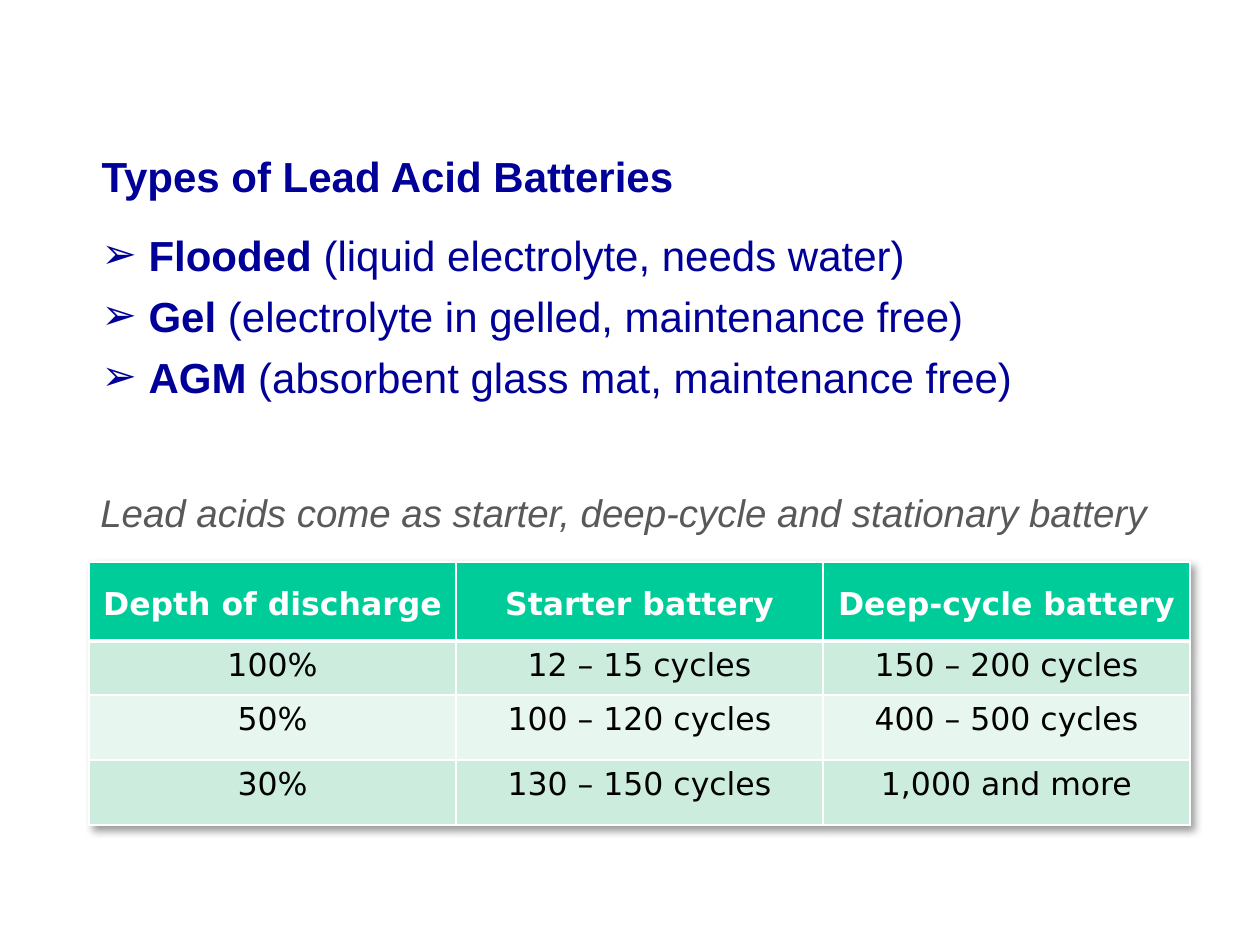
from lxml import etree
from pptx import Presentation, util as u
from pptx.dml.color import RGBColor
from pptx.enum import text
from pptx.oxml import parse_xml
from pptx.oxml.ns import nsdecls, qn

PX = 914400 // 126


def rgb(value):
    return RGBColor.from_string(value)


def style(run, font, size, color, bold=False, italic=False):
    f = run.font
    f.name, f.size, f.bold, f.italic = font, u.Pt(size), bold, italic
    f.color.rgb = rgb(color)


prs = Presentation()
prs.slide_width, prs.slide_height = u.Inches(10), u.Inches(7.5)
s = prs.slides.add_slide(prs.slide_layouts[1])
title, body = s.shapes.title, s.placeholders[1]
note = s.shapes.add_textbox(0, 0, 0, 0)

boxes = [(title, 89, 144, 953, 61), (body, 89, 223, 953, 190), (note, 88, 483, 1091, 59)]
for sp, x, y, w, h in boxes:
    sp.left, sp.top, sp.width, sp.height = x * PX, y * PX, w * PX, h * PX
    tf = sp.text_frame
    tf.word_wrap = True
    tf.auto_size = text.MSO_AUTO_SIZE.NONE
    tf.vertical_anchor = text.MSO_ANCHOR.TOP

title.text_frame.text = "Types of Lead Acid Batteries"
p = title.text_frame.paragraphs[0]
p.alignment = text.PP_ALIGN.LEFT
style(p.runs[0], "Arial", 24, "000099", bold=True)

types = [
    ("Flooded", " (liquid electrolyte, needs water)"),
    ("Gel", " (electrolyte in gelled, maintenance free)"),
    ("AGM", " (absorbent glass mat, maintenance free)"),
]
tf = body.text_frame
for i, (name, detail) in enumerate(types):
    p = tf.paragraphs[0] if i == 0 else tf.add_paragraph()
    pPr = p._p.get_or_add_pPr()
    pPr.set("marL", str(47 * PX))
    pPr.set("indent", str(-47 * PX))
    etree.SubElement(pPr, qn("a:buFont")).set("typeface", "Arial")
    etree.SubElement(pPr, qn("a:buChar")).set("char", "➢")
    p.space_before, p.space_after = u.Pt(0), u.Pt(6)
    for words, bold in ((name, True), (detail, False)):
        r = p.add_run()
        r.text = words
        style(r, "Arial", 24, "000099", bold=bold)

note.text_frame.text = "Lead acids come as starter, deep-cycle and stationary battery"
p = note.text_frame.paragraphs[0]
p.space_after = u.Pt(6)
style(p.runs[0], "Arial", 22, "595959", italic=True)

rows = [
    ("Depth of discharge", "Starter battery", "Deep-cycle battery"),
    ("100%", "12 – 15 cycles", "150 – 200 cycles"),
    ("50%", "100 – 120 cycles", "400 – 500 cycles"),
    ("30%", "130 – 150 cycles", "1,000 and more"),
]
heights = [79, 54, 65, 65]
fills = ["00CC99", "CCECDE", "E7F6EF", "CCECDE"]
table = s.shapes.add_table(4, 3, 89 * PX, 562 * PX, 1101 * PX, sum(heights) * PX).table
table._tbl.tblPr.insert(0, parse_xml(
    f'<a:effectLst {nsdecls("a")}><a:outerShdw blurRad="50800" dist="38100" dir="2700000" algn="tl">'
    '<a:srgbClr val="000000"><a:alpha val="40000"/></a:srgbClr></a:outerShdw></a:effectLst>'))
for column in table.columns:
    column.width = 367 * PX
for i, values in enumerate(rows):
    table.rows[i].height = heights[i] * PX
    for j, value in enumerate(values):
        cell = table.cell(i, j)
        tcPr = cell._tc.get_or_add_tcPr()
        for side in "LRTB":
            thick = (i, side) in ((0, "B"), (1, "T"))
            tcPr.append(parse_xml(
                f'<a:ln{side} {nsdecls("a")} w="{u.Pt(3 if thick else 1)}"><a:solidFill>'
                f'<a:srgbClr val="FFFFFF"/></a:solidFill></a:ln{side}>'))
        cell.fill.solid()
        cell.fill.fore_color.rgb = rgb(fills[i])
        cell.text_frame.text = value
        p = cell.text_frame.paragraphs[0]
        p.alignment = text.PP_ALIGN.CENTER
        if i == 0:
            p.line_spacing = 1.5
        style(p.runs[0], "DejaVu Sans", 18, "000000" if i else "FFFFFF", bold=i == 0)

prs.save("out.pptx")
